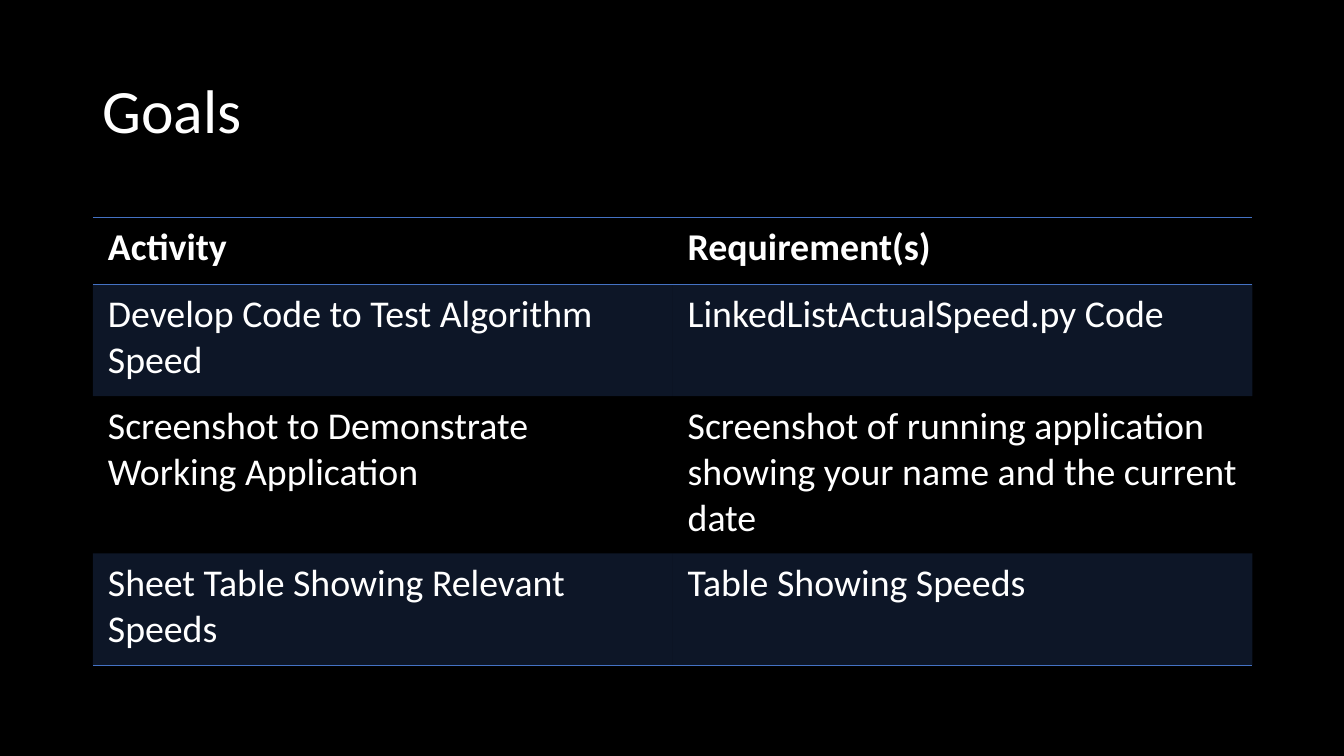
from dataclasses import dataclass

from lxml import etree
from pptx import Presentation
from pptx.dml import color as dml
from pptx.enum import text
from pptx.oxml import ns
from pptx.util import Inches, Pt


@dataclass
class Theme:
    font: str = "Calibri"
    back: str = "000000"
    ink: str = "FFFFFF"
    blue: str = "4472C4"
    tint: int = 20
    title: int = 44
    body: int = 27
    rule: int = 1


def rgb(code):
    return dml.RGBColor.from_string(code)


class Deck:
    def __init__(self, theme):
        self.theme = theme
        self.file = Presentation()
        self.file.slide_width = Inches(13.33)
        self.file.slide_height = Inches(7.5)

    def page(self):
        self.slide = self.file.slides.add_slide(self.file.slide_layouts[6])
        fill = self.slide.background.fill
        fill.solid()
        fill.fore_color.rgb = rgb(self.theme.back)

    def label(self, para, words, size, bold=False):
        run = para.add_run()
        run.text = words
        run.font.name = self.theme.font
        run.font.size = Pt(size)
        run.font.bold = bold
        run.font.color.rgb = rgb(self.theme.ink)

    def title(self, words, box):
        frame = self.slide.shapes.add_textbox(*map(Inches, box)).text_frame
        frame.word_wrap = True
        frame.vertical_anchor = text.MSO_ANCHOR.MIDDLE
        para = frame.paragraphs[0]
        para.line_spacing = 0.9
        self.label(para, words, self.theme.title)

    def rule(self, cell, side):
        props = cell._tc.get_or_add_tcPr()
        line = etree.SubElement(props, ns.qn(f"a:ln{side}"), w=str(Pt(self.theme.rule)))
        fill = etree.SubElement(line, ns.qn("a:solidFill"))
        etree.SubElement(fill, ns.qn("a:srgbClr"), val=self.theme.blue)

    def shade(self, cell, on):
        if not on:
            cell.fill.background()
            return
        cell.fill.solid()
        cell.fill.fore_color.rgb = rgb(self.theme.blue)
        tone = cell._tc.tcPr.find(ns.qn("a:solidFill")).find(ns.qn("a:srgbClr"))
        etree.SubElement(tone, ns.qn("a:alpha"), val=str(self.theme.tint * 1000))

    def cell(self, cell, words, row, last):
        cell.margin_left = cell.margin_right = Inches(0.15)
        cell.margin_top = cell.margin_bottom = Inches(0.07)
        if row == 0:
            self.rule(cell, "T")
        if row in (0, last):
            self.rule(cell, "B")
        self.shade(cell, row % 2 == 1)
        self.label(cell.text_frame.paragraphs[0], words, self.theme.body, row == 0)

    def table(self, rows, box, highs):
        frame = self.slide.shapes.add_table(len(rows), len(rows[0]), *map(Inches, box))
        grid = frame.table
        grid.first_row = grid.horz_banding = False
        style = grid._tbl.tblPr.find(ns.qn("a:tableStyleId"))
        style.text = "{2D5ABB26-0587-4C30-8999-92F81FD0307C}"
        for row, (items, high) in enumerate(zip(rows, highs)):
            grid.rows[row].height = Inches(high)
            for col, words in enumerate(items):
                self.cell(grid.cell(row, col), words, row, len(rows) - 1)

    def save(self):
        self.file.save("out.pptx")


GOALS = [
    ("Activity", "Requirement(s)"),
    ("Develop Code to Test Algorithm Speed", "LinkedListActualSpeed.py Code"),
    (
        "Screenshot to Demonstrate Working Application",
        "Screenshot of running application showing your name and the current date",
    ),
    ("Sheet Table Showing Relevant Speeds", "Table Showing Speeds"),
]


def main():
    deck = Deck(Theme())
    deck.page()
    deck.title("Goals", (0.92, 0.4, 11.5, 1.45))
    deck.table(GOALS, (0.92, 2.16, 11.5, 4.44), (0.66, 1.11, 1.56, 1.11))
    deck.save()


if __name__ == "__main__":
    main()
